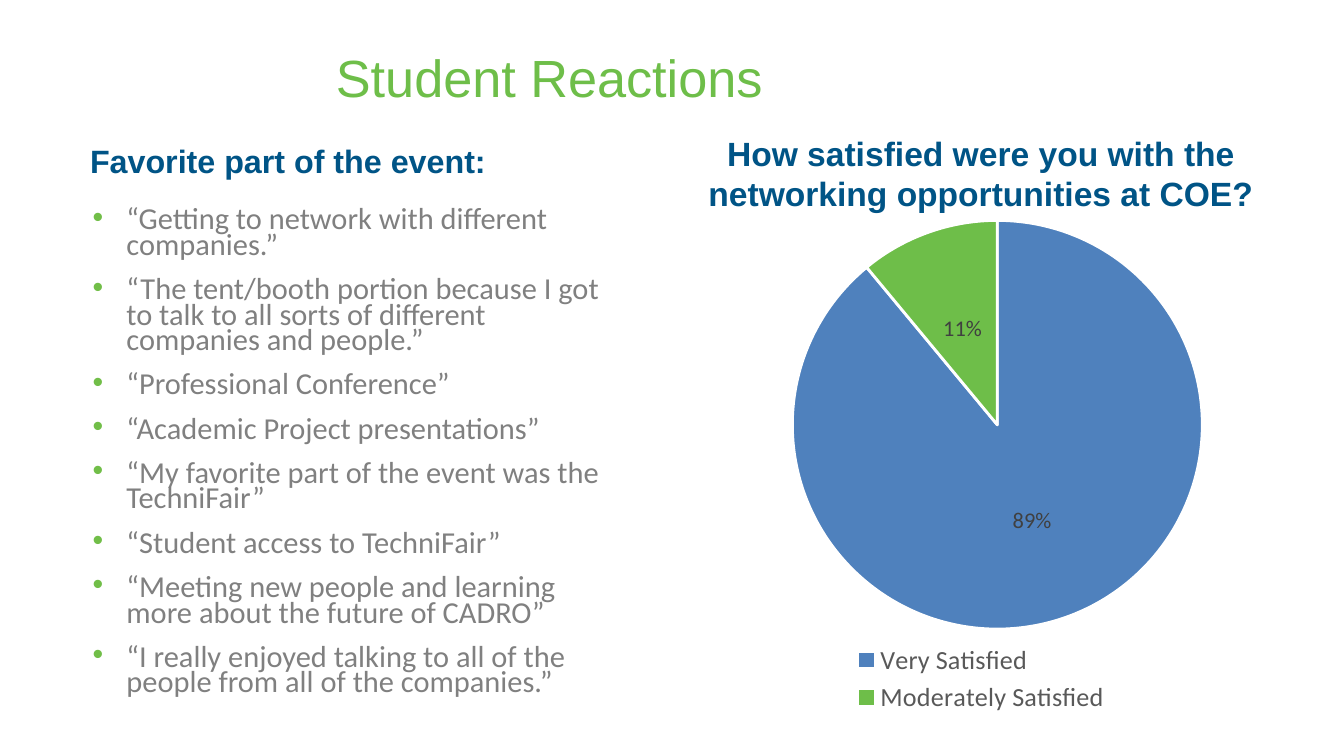
from lxml.etree import SubElement
from pptx import Presentation
from pptx.chart.data import CategoryChartData
from pptx.dml.color import RGBColor
from pptx.enum.chart import XL_CHART_TYPE as ChartType
from pptx.enum.chart import XL_LABEL_POSITION as LabelPosition
from pptx.enum.chart import XL_LEGEND_POSITION as LegendPosition
from pptx.enum.text import MSO_ANCHOR as Anchor
from pptx.enum.text import PP_ALIGN as Align
from pptx.oxml.ns import qn
from pptx.util import Cm, Pt

COLORS = {
    "green": "6EBE49",
    "bullet": "71BE48",
    "navy": "005486",
    "blue": "4F81BD",
    "quote": "808080",
    "legend": "595959",
    "label": "404040",
    "white": "FFFFFF",
}

QUOTES = [
    "“Getting to network with different companies.”",
    "“The tent/booth portion because I got to talk to all sorts of different companies and people.”",
    "“Professional Conference”",
    "“Academic Project presentations”",
    "“My favorite part of the event was the TechniFair”",
    "“Student access to TechniFair”",
    "“Meeting new people and learning more about the future of CADRO”",
    "“I really enjoyed talking to all of the people from all of the companies.”",
]

SATISFACTION = {"Very Satisfied": (89, "blue"), "Moderately Satisfied": (11, "green")}


def rgb(name):
    return RGBColor.from_string(COLORS[name])


def set_font(font, size, color, name, bold=False):
    font.size, font.name, font.bold = Pt(size), name, bold
    font.color.rgb = rgb(color)


def write(paragraph, text, size=18, color="navy", font="Arial", bold=False, align=Align.LEFT):
    run = paragraph.add_run()
    run.text = text
    paragraph.alignment = align
    set_font(run.font, size, color, font, bold)


def add_bullet(paragraph, indent=Cm(0.64)):
    properties = paragraph._p.get_or_add_pPr()
    properties.set("marL", str(indent))
    properties.set("indent", str(-indent))
    bullet_color = SubElement(properties, qn("a:buClr"))
    SubElement(bullet_color, qn("a:srgbClr"), val=COLORS["bullet"])
    SubElement(properties, qn("a:buFont"), typeface="Arial")
    SubElement(properties, qn("a:buChar"), char="•")


def place_plot(chart, **fractions):
    """Fix the inner plot area, in fractions of the chart's size."""
    plot_area = chart._chartSpace.chart.plotArea
    for old in plot_area.findall(qn("c:layout")):
        plot_area.remove(old)
    layout = plot_area.makeelement(qn("c:layout"))
    plot_area.insert(0, layout)
    manual = SubElement(layout, qn("c:manualLayout"))
    settings = {"layoutTarget": "inner", "xMode": "edge", "yMode": "edge", **fractions}
    for tag, value in settings.items():
        SubElement(manual, qn(f"c:{tag}"), val=str(value))


class ReactionSlide:
    """Holds the slide and the insets shared by its text boxes."""

    inset_x, inset_y = Cm(0.18), Cm(0.1)

    def __init__(self, presentation):
        self.slide = presentation.slides.add_slide(presentation.slide_layouts[6])

    def text_frame(self, box, anchor):
        frame = self.slide.shapes.add_textbox(*map(Cm, box)).text_frame
        frame.word_wrap = True
        frame.vertical_anchor = anchor
        frame.margin_left = frame.margin_right = self.inset_x
        frame.margin_top = frame.margin_bottom = self.inset_y
        return frame

    def heading(self, text, box, **style):
        write(self.text_frame(box, Anchor.BOTTOM).paragraphs[0], text, **style)

    def bullets(self, items, box, **style):
        frame = self.text_frame(box, Anchor.TOP)
        for index, item in enumerate(items):
            paragraph = frame.add_paragraph() if index else frame.paragraphs[0]
            add_bullet(paragraph)
            paragraph.line_spacing = 0.7
            if index:
                paragraph.space_before = Pt(10)
            write(paragraph, item, **style)

    def pie(self, slices, box):
        data = CategoryChartData()
        data.categories = list(slices)
        data.add_series("Satisfaction", [value for value, _ in slices.values()])
        chart = self.slide.shapes.add_chart(ChartType.PIE, *map(Cm, box), data).chart
        chart.has_title = False
        chart.font.name, chart.font.size = "Calibri", Pt(10)
        chart.has_legend = True
        chart.legend.position = LegendPosition.BOTTOM
        chart.legend.include_in_layout = False
        set_font(chart.legend.font, 14, "legend", "Calibri")
        place_plot(chart, x=0.08, y=0, w=0.93, h=0.82)

        plot = chart.plots[0]
        plot.vary_by_categories = True
        for index, (_, color) in enumerate(slices.values()):
            wedge = plot.series[0].points[index].format
            wedge.fill.solid()
            wedge.fill.fore_color.rgb = rgb(color)
            wedge.line.color.rgb = rgb("white")
            wedge.line.width = Pt(1.5)

        plot.has_data_labels = True
        labels = plot.data_labels
        labels.show_percentage, labels.show_value = True, False
        labels.number_format, labels.number_format_is_linked = "0%", False
        labels.position = LabelPosition.CENTER
        set_font(labels.font, 12, "label", "Calibri")


def main():
    presentation = Presentation()
    presentation.slide_width, presentation.slide_height = Cm(25.4), Cm(14.29)
    page = ReactionSlide(presentation)
    page.heading("Student Reactions", (6.17, 0.46, 18.1, 1.68), size=28, color="green")
    page.bullets(QUOTES, (1.57, 3.86, 10.41, 9.37), size=16.3, color="quote", font="Calibri")
    page.heading("Favorite part of the event:", (1.24, 2.51, 8.41, 0.99),
                 size=17.3, bold=True, align=Align.CENTER)
    page.heading("How satisfied were you with the networking opportunities at COE?",
                 (13.13, 1.88, 10.82, 2.26), bold=True, align=Align.CENTER)
    page.pie(SATISFACTION, (14.27, 4.14, 8.56, 9.45))
    presentation.save("out.pptx")


if __name__ == "__main__":
    main()
